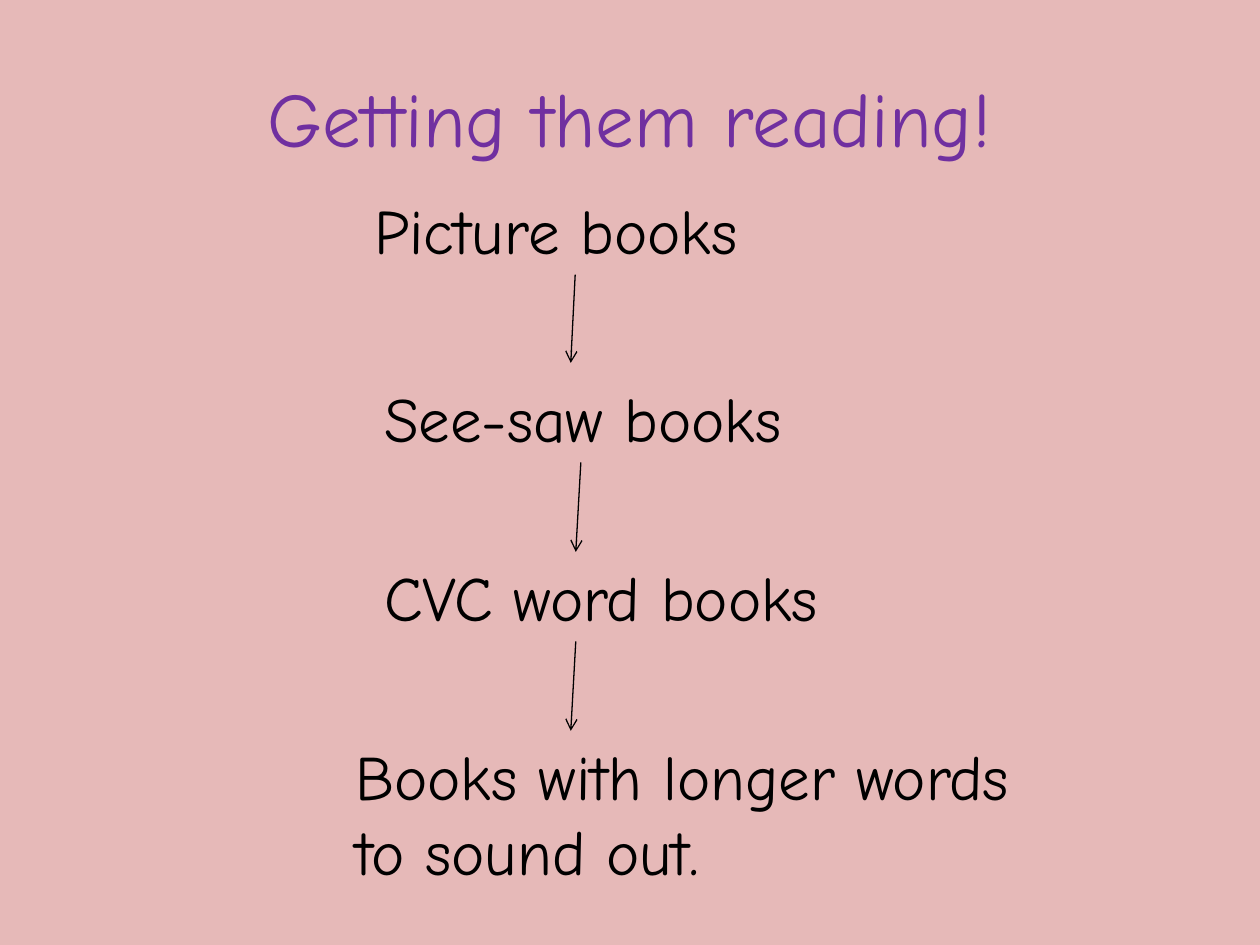
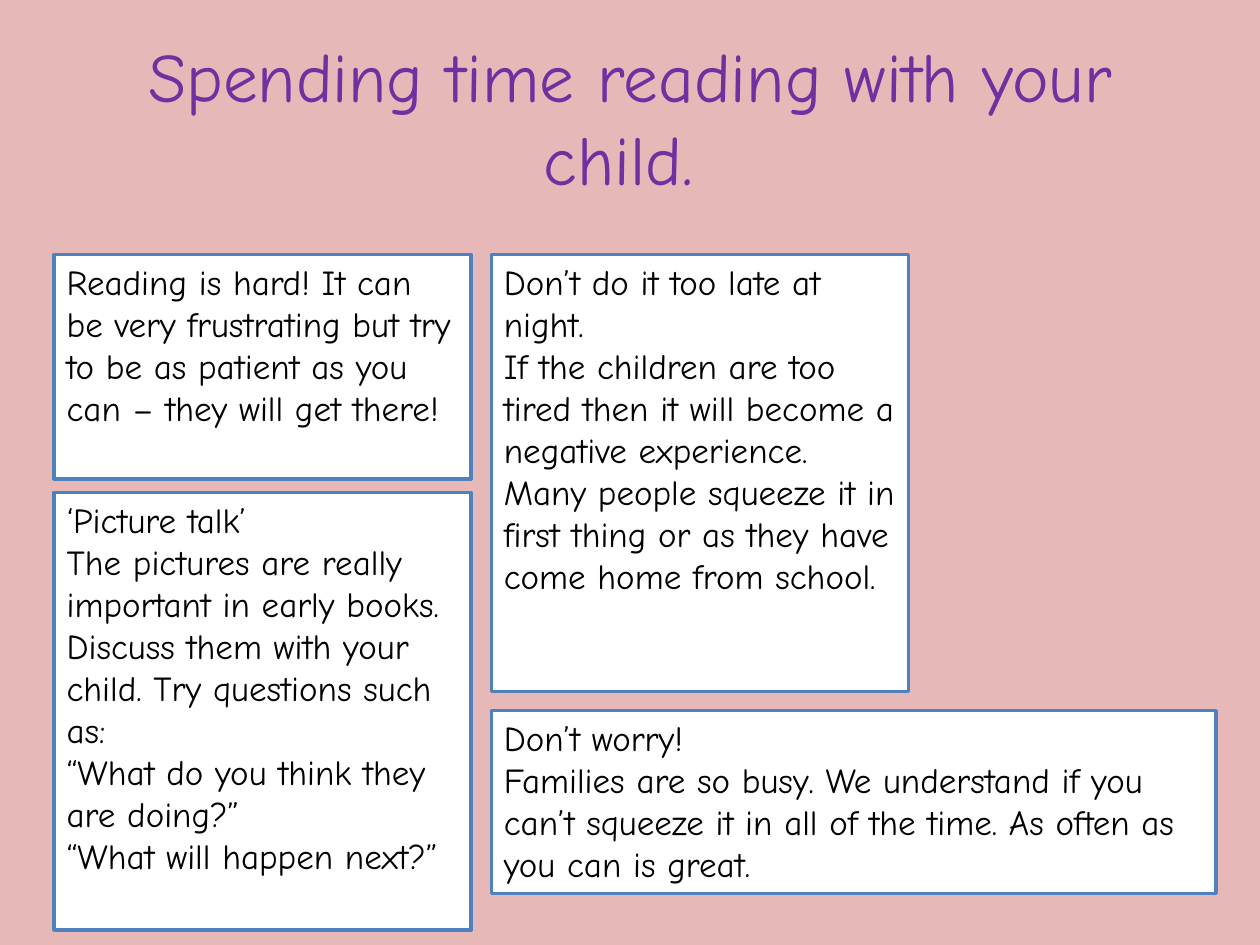
from dataclasses import dataclass
from typing import Any

from lxml.etree import SubElement
from pptx import Presentation
from pptx.dml.color import RGBColor
from pptx.enum.shapes import MSO_CONNECTOR as Connector, MSO_SHAPE as Shape
from pptx.enum.text import MSO_ANCHOR as Anchor, PP_ALIGN as Align
from pptx.oxml.ns import qn
from pptx.util import Inches, Pt

COLOURS = {
    "background": "E6B9B8",
    "title": "7030A0",
    "text": "000000",
    "panel": "FFFFFF",
    "border": "4F81BD",
}
FONT = "Comic Neue"
BOTTOM = 2
STEP_SIZE = 36
PANEL_SIZE = 20
ARROW_DROP = 0.71
ARROW_DRIFT = 0.04


@dataclass(frozen=True)
class TextBlock:
    left: float
    top: float
    width: float
    height: float
    paragraphs: tuple[str, ...]

    def bounds(self) -> tuple[int, ...]:
        return tuple(Inches(value) for value in (self.left, self.top, self.width, self.height))


@dataclass(frozen=True)
class Arrow:
    x: float
    y: float
    source: int | None = None


STEPS = (
    TextBlock(2.87, 1.47, 3.39, 0.71, ("Picture books",)),
    TextBlock(2.95, 2.96, 3.66, 0.71, ("See-saw books",)),
    TextBlock(2.95, 4.38, 3.94, 0.71, ("CVC word books",)),
    TextBlock(2.72, 5.8, 6.04, 1.31, ("Books with longer words", "to sound out.")),
)
ARROWS = (Arrow(4.57, 2.17, source=0), Arrow(4.61, 3.67), Arrow(4.57, 5.09))

LEFT_COLUMN, RIGHT_COLUMN = 0.43, 3.9
PANEL_TOP, PANEL_WIDTH, TALL = 2.02, 3.31, 3.47
PANELS = (
    TextBlock(LEFT_COLUMN, PANEL_TOP, PANEL_WIDTH, 1.78, (
        "Reading is hard! It can be very frustrating but try to be as patient "
        "as you can – they will get there!",
    )),
    TextBlock(LEFT_COLUMN, 3.91, PANEL_WIDTH, TALL, (
        "‘Picture talk’",
        "The pictures are really important in early books. Discuss them with "
        "your child. Try questions such as:",
        "“What do you think they are doing?”",
        "“What will happen next?”",
    )),
    TextBlock(RIGHT_COLUMN, PANEL_TOP, PANEL_WIDTH, TALL, (
        "Don’t do it too late at night.",
        "If the children are too tired then it will become a negative experience. "
        "Many people squeeze it in first thing or as they have come home from school.",
    )),
    TextBlock(RIGHT_COLUMN, 5.64, 5.75, 1.45, (
        "Don’t worry!",
        "Families are so busy. We understand if you can’t squeeze it in all of "
        "the time. As often as you can is great.",
    )),
)


def colour(name: str) -> RGBColor:
    return RGBColor.from_string(COLOURS[name])


def apply_format(target: Any, values: dict[str, Any]) -> None:
    for name, value in values.items():
        setattr(target, name, value)


def write_text(shape: Any, paragraphs: tuple[str, ...], size: float,
               colour_name: str = "text", align: Align = Align.LEFT,
               anchor: Anchor = Anchor.TOP) -> None:
    frame = shape.text_frame
    apply_format(frame, {"word_wrap": True, "vertical_anchor": anchor})
    frame.text = "\n".join(paragraphs)
    for paragraph in frame.paragraphs:
        paragraph.alignment = align
        for run in paragraph.runs:
            apply_format(run.font, {"name": FONT, "size": Pt(size)})
            run.font.color.rgb = colour(colour_name)


def add_text_box(slide: Any, block: TextBlock, size: float, **style: Any) -> Any:
    box = slide.shapes.add_textbox(*block.bounds())
    write_text(box, block.paragraphs, size, **style)
    return box


def add_titled_slide(presentation: Any, title: str, size: float) -> Any:
    slide = presentation.slides.add_slide(presentation.slide_layouts[6])
    add_text_box(slide, TextBlock(0.5, 0.3, 9, 1.25, (title,)), size,
                 colour_name="title", align=Align.CENTER, anchor=Anchor.MIDDLE)
    return slide


def add_arrow(slide: Any, arrow: Arrow, steps: list[Any]) -> None:
    connector = slide.shapes.add_connector(
        Connector.STRAIGHT, Inches(arrow.x), Inches(arrow.y),
        Inches(arrow.x - ARROW_DRIFT), Inches(arrow.y + ARROW_DROP))
    if arrow.source is not None:
        connector.begin_connect(steps[arrow.source], BOTTOM)
    connector.line.color.rgb = colour("text")
    connector.line.width = Pt(0.75)
    properties = connector._element.spPr
    SubElement(properties.find(qn("a:ln")), qn("a:tailEnd"), type="arrow")
    SubElement(properties, qn("a:effectLst"))


def add_panel(slide: Any, block: TextBlock) -> None:
    panel = slide.shapes.add_shape(Shape.RECTANGLE, *block.bounds())
    panel.shadow.inherit = False
    panel.fill.solid()
    panel.fill.fore_color.rgb = colour("panel")
    panel.line.color.rgb = colour("border")
    panel.line.width = Pt(2)
    write_text(panel, block.paragraphs, PANEL_SIZE)


def main() -> None:
    presentation = Presentation()
    apply_format(presentation, {"slide_width": Inches(10), "slide_height": Inches(7.5)})
    background = presentation.slide_master.background.fill
    background.solid()
    background.fore_color.rgb = colour("background")

    reading = add_titled_slide(presentation, "Getting them reading!", 44)
    steps = [add_text_box(reading, step, STEP_SIZE) for step in STEPS]
    for arrow in ARROWS:
        add_arrow(reading, arrow, steps)

    together = add_titled_slide(presentation, "Spending time reading with your child. ", 39.6)
    for panel in PANELS:
        add_panel(together, panel)

    presentation.save("out.pptx")


if __name__ == "__main__":
    main()
